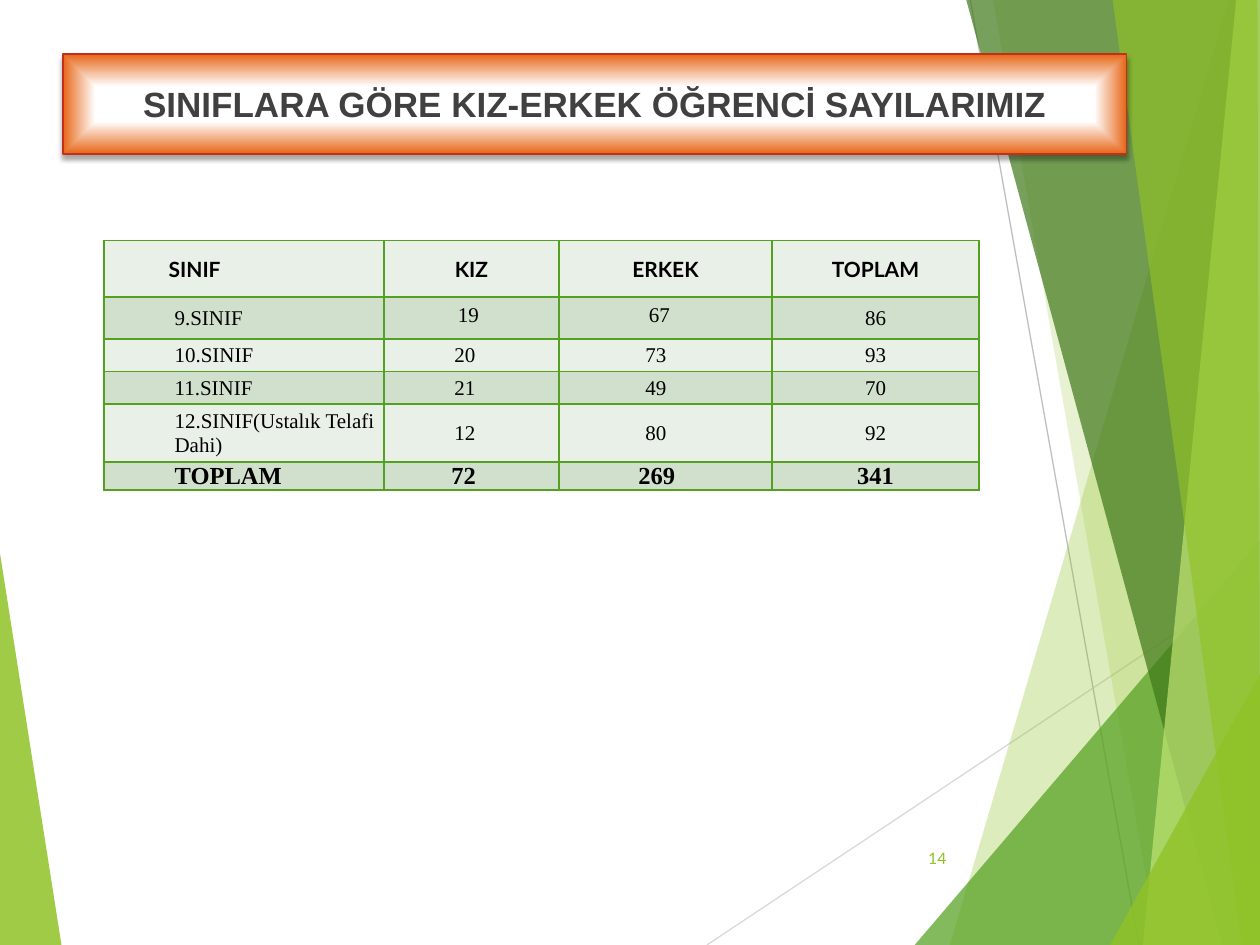
import lxml.etree
import pptx
import pptx.dml.color
import pptx.enum.shapes
import pptx.enum.text
import pptx.oxml
import pptx.oxml.ns
import pptx.util

Cm = pptx.util.Cm
Pt = pptx.util.Pt
RGB = pptx.dml.color.RGBColor
qn = pptx.oxml.ns.qn
ALIGN = pptx.enum.text.PP_ALIGN
MIDDLE = pptx.enum.text.MSO_ANCHOR.MIDDLE

LIME = RGB(0x90, 0xC2, 0x26)
GREEN = RGB(0x54, 0xA0, 0x21)
FOREST = RGB(0x3F, 0x78, 0x19)
PALE = RGB(0xC0, 0xE4, 0x74)
MIST = RGB(0xE9, 0xF0, 0xE8)
SAGE = RGB(0xD1, 0xDF, 0xCD)
SILVER = RGB(0xD9, 0xD9, 0xD9)
GRAY = RGB(0xBF, 0xBF, 0xBF)
WHITE = RGB(0xFF, 0xFF, 0xFF)
ORANGE = RGB(0xE7, 0x66, 0x18)
RED = RGB(0xC4, 0x2F, 0x1A)
DARK = RGB(0x40, 0x40, 0x40)
BLACK = RGB(0, 0, 0)

WIDE, HIGH = 25.4, 19.05
LATO = {"name": "Lato", "size": Pt(12), "bold": True}
SERIF = {"name": "Times New Roman", "size": Pt(12), "bold": False}
SUM = {**SERIF, "size": Pt(14), "bold": True}

# Each shard: colour, opacity in percent, corners in cm
LEFT = (LIME, 85, [(0, 11.15), (1.24, HIGH), (0, HIGH)])
RIGHT = [
    (LIME, 30, [(24.77, 0), (19.15, HIGH), (WIDE, HIGH), (WIDE, 0)]),
    (LIME, 20, [(20.02, 0), (23.34, HIGH), (WIDE, HIGH), (WIDE, 0)]),
    (GREEN, 72, [(18.44, HIGH), (WIDE, 10.9), (WIDE, HIGH)]),
    (FOREST, 70, [(19.48, 0), (24.64, HIGH), (WIDE, HIGH), (WIDE, 0)]),
    (PALE, 70, [(24.92, 0), (23.04, HIGH), (WIDE, HIGH), (WIDE, 0)]),
    (LIME, 65, [(22.43, 0), (25.04, HIGH), (WIDE, HIGH), (25.35, 0)]),
    (LIME, 80, [(22.38, HIGH), (WIDE, 13.59), (WIDE, HIGH)]),
]
RAYS = [(SILVER, (14.25, HIGH), (WIDE, 11.63)),
        (GRAY, (19.56, 0), (22.96, HIGH))]

HEAD = ["SINIF", "KIZ", "ERKEK", "TOPLAM"]
ROWS = [
    ["9.SINIF", "19", "67", "86"],
    ["10.SINIF", "20", "73", "93"],
    ["11.SINIF", "21", "49", "70"],
    ["12.SINIF(Ustalık Telafi Dahi)", "12", "80", "92"],
    ["TOPLAM", "72", "269", "341"],
]


def set_all(item, form):
    for key, value in form.items():
        setattr(item, key, value)


def write(frame, text, form, color, align):
    par = frame.paragraphs[0]
    par.alignment = align
    run = par.add_run()
    run.text = text
    set_all(run.font, form)
    run.font.color.rgb = color
    return par


def add_shard(slide, x, y, color, alpha, spots):
    spots = [(Cm(x + a), Cm(y + b)) for a, b in spots]
    pen = slide.shapes.build_freeform(*spots[0])
    pen.add_line_segments(spots[1:], close=True)
    shard = pen.convert_to_shape()
    shard.shadow.inherit = False
    shard.fill.solid()
    shard.fill.fore_color.rgb = color
    shard.line.fill.background()
    tint = shard._element.spPr.find(qn("a:solidFill"))[0]
    lxml.etree.SubElement(tint, qn("a:alpha")).set("val", str(alpha * 1000))


def add_ray(slide, x, y, color, start, end):
    ray = slide.shapes.add_connector(
        pptx.enum.shapes.MSO_CONNECTOR.STRAIGHT,
        Cm(x + start[0]), Cm(y + start[1]), Cm(x + end[0]), Cm(y + end[1]))
    ray.line.color.rgb = color
    ray.line.width = Pt(0.75)
    lxml.etree.SubElement(ray._element.spPr, qn("a:effectLst"))


def add_backdrop(slide, x, y):
    add_shard(slide, x, y, *LEFT)
    for ray in RAYS:
        add_ray(slide, x, y, *ray)
    for shard in RIGHT:
        add_shard(slide, x, y, *shard)


def add_border(cell):
    props = cell._tc.get_or_add_tcPr()
    for place, side in enumerate(("lnL", "lnR", "lnT", "lnB")):
        props.insert(place, pptx.oxml.parse_xml(
            f'<a:{side} {pptx.oxml.ns.nsdecls("a")} w="12700"><a:solidFill>'
            f'<a:srgbClr val="{GREEN}"/></a:solidFill></a:{side}>'))


def add_cell(cell, text, form, color, indent, align):
    set_all(cell, {"vertical_anchor": MIDDLE, "margin_left": Cm(0.18),
                   "margin_right": Cm(0.18), "margin_top": Cm(0.02),
                   "margin_bottom": 0})
    cell.fill.solid()
    cell.fill.fore_color.rgb = color
    par = write(cell.text_frame, text, form, BLACK, align)
    par.space_before = Pt(6)
    props = par._p.get_or_add_pPr()
    props.set("marL", str(Cm(indent)))
    props.set("indent", "0")
    add_border(cell)


def add_counts(slide, x, y, wide, high):
    grid = slide.shapes.add_table(len(ROWS) + 1, len(HEAD), Cm(x), Cm(y),
                                  Cm(wide), Cm(high)).table
    set_all(grid, {"first_row": False, "horz_banding": False})
    for col, part in zip(grid.columns, (0.32, 0.2, 0.243, 0.237)):
        col.width = Cm(round(wide * part, 2))
    for row, size in zip(grid.rows, (1.14, 0.84, 0.66, 0.66, 1.16, 0.51)):
        row.height = Cm(size)

    # Header row: first label indented, the others centred
    for col, text in enumerate(HEAD):
        add_cell(grid.cell(0, col), text, LATO, MIST, 0 if col else 1.12,
                 ALIGN.CENTER if col else ALIGN.LEFT)

    # Class rows and the sum row: indented columns, last one centred
    for row, texts in enumerate(ROWS, 1):
        last = row == len(ROWS)
        form = SUM if last else SERIF
        steps = (1.24, 1.18, 1.42, 0) if last else (1.24, 1.24, 1.56, 0)
        for col, (text, step) in enumerate(zip(texts, steps)):
            add_cell(grid.cell(row, col), text, form, SAGE if row % 2 else MIST,
                     step, ALIGN.LEFT if step else ALIGN.CENTER)

    # The first girl and boy counts sit a little higher and further in
    for col in (1, 2):
        set_all(grid.cell(1, col), {"margin_left": Cm(0.25),
                                    "margin_bottom": Cm(0.13)})


def add_number(slide, x, y, wide, high):
    box = slide.shapes.add_textbox(Cm(x), Cm(y), Cm(wide), Cm(high))
    set_all(box.text_frame, {"word_wrap": True, "vertical_anchor": MIDDLE})
    write(box.text_frame, "14", {"name": "Lato", "size": Pt(9)}, LIME,
          ALIGN.RIGHT)


def add_banner(slide, x, y, wide, high):
    title = slide.shapes.title
    set_all(title, {"left": Cm(x), "top": Cm(y),
                    "width": Cm(wide), "height": Cm(high)})
    set_all(title.text_frame, {"word_wrap": True, "vertical_anchor": MIDDLE,
                               "auto_size": pptx.enum.text.MSO_AUTO_SIZE.NONE})
    write(title.text_frame, "SINIFLARA GÖRE KIZ-ERKEK ÖĞRENCİ SAYILARIMIZ",
          {"name": "Arial", "size": Pt(20), "bold": True}, DARK, ALIGN.CENTER)

    # Glow from the edges, thin outline and soft shadow
    names = pptx.oxml.ns.nsdecls("a")
    stops = "".join(
        f'<a:gs pos="{spot * 1000}"><a:srgbClr val="{color}"/></a:gs>'
        for spot, color in ((0, WHITE), (35, WHITE), (100, ORANGE)))
    props = title._element.spPr
    props.append(pptx.oxml.parse_xml(
        f'<a:gradFill {names} rotWithShape="1"><a:gsLst>{stops}</a:gsLst>'
        '<a:path path="shape"><a:fillToRect l="50000" t="50000" r="50000" '
        'b="50000"/></a:path></a:gradFill>'))
    title.line.color.rgb = RED
    title.line.width = Pt(1)
    props.append(pptx.oxml.parse_xml(
        f'<a:effectLst {names}><a:outerShdw blurRad="{Pt(3)}" dist="{Pt(2)}" '
        f'dir="5400000" rotWithShape="0"><a:srgbClr val="{BLACK}">'
        '<a:alpha val="35000"/></a:srgbClr></a:outerShdw></a:effectLst>'))
    # Bring the banner in front of the backdrop
    slide.shapes._spTree.append(title._element)


def main():
    deck = pptx.Presentation()
    set_all(deck, {"slide_width": Cm(WIDE), "slide_height": Cm(HIGH)})
    slide = deck.slides.add_slide(deck.slide_layouts[5])
    add_backdrop(slide, 0, 0)
    add_counts(slide, 2.1, 4.85, 17.64, 4.97)
    add_number(slide, 17.91, 16.79, 1.42, 1.02)
    add_banner(slide, 1.27, 1.09, 21.44, 2.01)
    deck.save("out.pptx")


if __name__ == "__main__":
    main()
